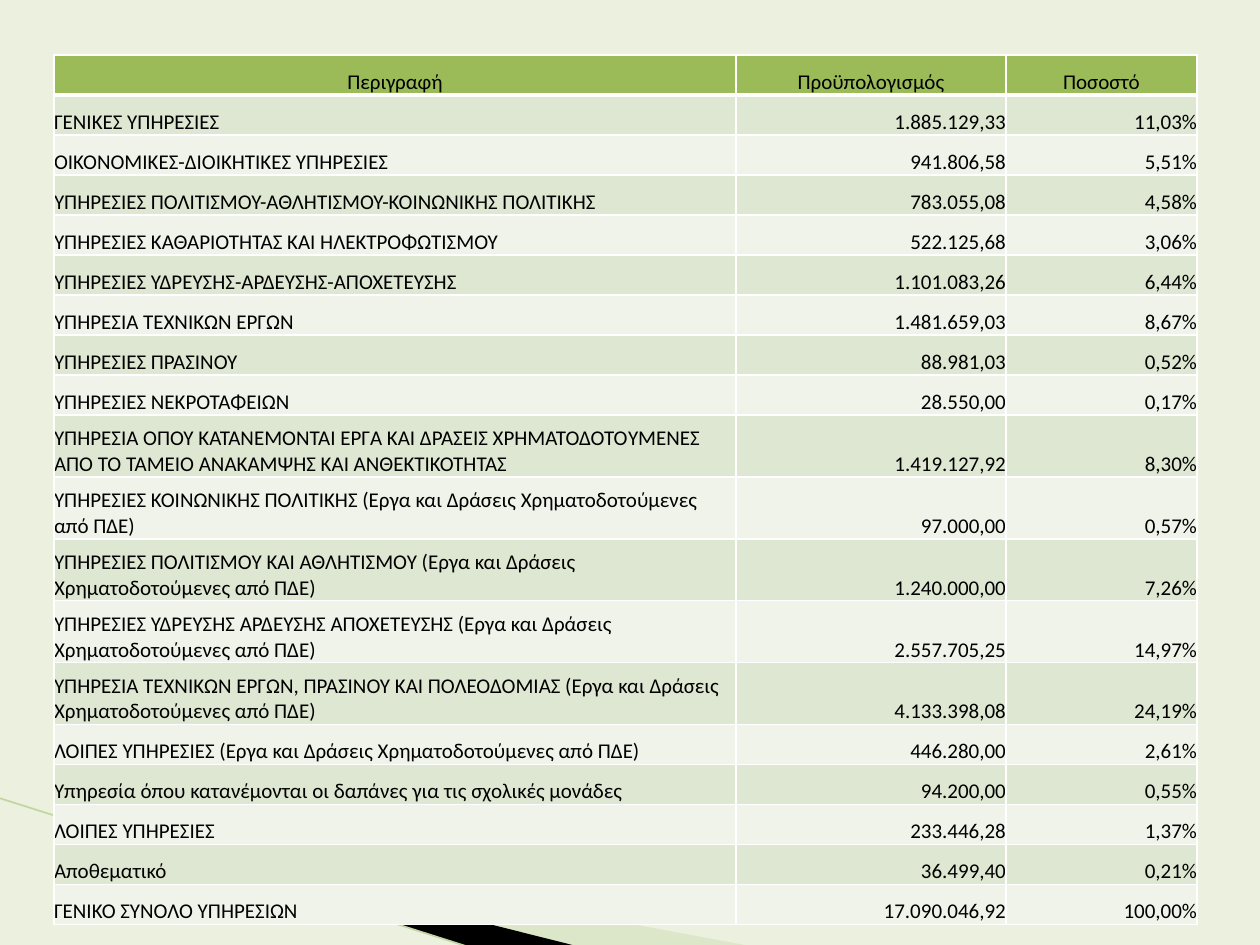
"""Builds a slide with a municipal budget table broken down by service."""
from dataclasses import dataclass

import lxml.etree
import pptx
import pptx.dml.color
import pptx.enum.shapes
import pptx.enum.text
import pptx.oxml
import pptx.oxml.ns
import pptx.util

HEADER = ("Περιγραφή", "Προϋπολογισμός", "Ποσοστό")
SERVICES = [
    ("ΓΕΝΙΚΕΣ ΥΠΗΡΕΣΙΕΣ", "1.885.129,33", "11,03%"),
    ("ΟΙΚΟΝΟΜΙΚΕΣ-ΔΙΟΙΚΗΤΙΚΕΣ ΥΠΗΡΕΣΙΕΣ", "941.806,58", "5,51%"),
    ("ΥΠΗΡΕΣΙΕΣ ΠΟΛΙΤΙΣΜΟΥ-ΑΘΛΗΤΙΣΜΟΥ-ΚΟΙΝΩΝΙΚΗΣ ΠΟΛΙΤΙΚΗΣ", "783.055,08", "4,58%"),
    ("ΥΠΗΡΕΣΙΕΣ ΚΑΘΑΡΙΟΤΗΤΑΣ ΚΑΙ ΗΛΕΚΤΡΟΦΩΤΙΣΜΟΥ", "522.125,68", "3,06%"),
    ("ΥΠΗΡΕΣΙΕΣ ΥΔΡΕΥΣΗΣ-ΑΡΔΕΥΣΗΣ-ΑΠΟΧΕΤΕΥΣΗΣ", "1.101.083,26", "6,44%"),
    ("ΥΠΗΡΕΣΙΑ ΤΕΧΝΙΚΩΝ ΕΡΓΩΝ", "1.481.659,03", "8,67%"),
    ("ΥΠΗΡΕΣΙΕΣ ΠΡΑΣΙΝΟΥ", "88.981,03", "0,52%"),
    ("ΥΠΗΡΕΣΙΕΣ ΝΕΚΡΟΤΑΦΕΙΩΝ", "28.550,00", "0,17%"),
    ("ΥΠΗΡΕΣΙΑ ΟΠΟΥ ΚΑΤΑΝΕΜΟΝΤΑΙ ΕΡΓΑ ΚΑΙ ΔΡΑΣΕΙΣ ΧΡΗΜΑΤΟΔΟΤΟΎΜΕΝΕΣ "
     "ΑΠΟ ΤΟ ΤΑΜΕΙΟ ΑΝΑΚΑΜΨΗΣ ΚΑΙ ΑΝΘΕΚΤΙΚΟΤΗΤΑΣ", "1.419.127,92", "8,30%"),
    ("ΥΠΗΡΕΣΙΕΣ ΚΟΙΝΩΝΙΚΗΣ ΠΟΛΙΤΙΚΗΣ (Εργα και Δράσεις Χρηματοδοτούμενες από ΠΔΕ)",
     "97.000,00", "0,57%"),
    ("ΥΠΗΡΕΣΙΕΣ ΠΟΛΙΤΙΣΜΟΎ ΚΑΙ ΑΘΛΗΤΙΣΜΟΎ (Εργα και Δράσεις Χρηματοδοτούμενες από ΠΔΕ)",
     "1.240.000,00", "7,26%"),
    ("ΥΠΗΡΕΣΙΕΣ ΥΔΡΕΥΣΗΣ ΑΡΔΕΥΣΗΣ ΑΠΟΧΕΤΕΥΣΗΣ (Εργα και Δράσεις Χρηματοδοτούμενες από ΠΔΕ)",
     "2.557.705,25", "14,97%"),
    ("ΥΠΗΡΕΣΙΑ ΤΕΧΝΙΚΩΝ ΕΡΓΩΝ, ΠΡΑΣΙΝΟΥ ΚΑΙ ΠΟΛΕΟΔΟΜΙΑΣ "
     "(Εργα και Δράσεις Χρηματοδοτούμενες από ΠΔΕ)", "4.133.398,08", "24,19%"),
    ("ΛΟΙΠΕΣ ΥΠΗΡΕΣΙΕΣ (Εργα και Δράσεις Χρηματοδοτούμενες από ΠΔΕ)", "446.280,00", "2,61%"),
    ("Υπηρεσία όπου κατανέμονται οι δαπάνες για τις σχολικές μονάδες", "94.200,00", "0,55%"),
    ("ΛΟΙΠΕΣ ΥΠΗΡΕΣΙΕΣ", "233.446,28", "1,37%"),
    ("Αποθεματικό", "36.499,40", "0,21%"),
    ("ΓΕΝΙΚΟ ΣΥΝΟΛΟ ΥΠΗΡΕΣΙΩΝ", "17.090.046,92", "100,00%"),
]

PX = 914400 / 126
SLIDE_SIZE = (1260, 945)
TABLE_ORIGIN = (54, 55)
COLUMN_WIDTHS = (682, 270, 191)
ROW_HEIGHT, TWO_LINE_HEIGHT = 40, 62
TWO_LINE_LENGTH = 70
GREEN_WEDGE = [(69, 820), (750, 946), (575, 946), (69, 819)]
BLACK_WEDGE = [(67, 818), (576, 946), (469, 947), (68, 819)]
ACCENT_LINE = (-1, 798, 469, 947)


@dataclass(frozen=True)
class Theme:
    background: str = "EBF1DE"
    wedge_green: str = "C6D9AA"
    wedge_black: str = "000000"
    accent_line: str = "C1D5A2"
    header: str = "9BBB59"
    bands: tuple = ("DEE7D1", "EFF3EA")
    border: str = "FFFFFF"
    text: str = "000000"
    font: str = "Calibri"
    text_size: int = 12
    wedge_opacity: int = 40
    line_width: float = 0.95
    border_width: int = 1
    header_rule_width: int = 3


THEME = Theme()
ALIGN = pptx.enum.text.PP_ALIGN


def emu(px):
    return pptx.util.Emu(round(px * PX))


def paint(fill, color):
    fill.solid()
    fill.fore_color.rgb = pptx.dml.color.RGBColor.from_string(color)


def add_wedge(slide, points, color, opacity=100):
    builder = slide.shapes.build_freeform(*points[0], scale=PX)
    builder.add_line_segments(points[1:], close=True)
    shape = builder.convert_to_shape()
    shape.shadow.inherit = False
    shape.line.fill.background()
    paint(shape.fill, color)
    if opacity < 100:
        color_element = shape.fill._xPr.find(".//" + pptx.oxml.ns.qn("a:srgbClr"))
        alpha = lxml.etree.SubElement(color_element, pptx.oxml.ns.qn("a:alpha"))
        alpha.set("val", str(opacity * 1000))


def add_accent_line(slide):
    straight = pptx.enum.shapes.MSO_CONNECTOR.STRAIGHT
    connector = slide.shapes.add_connector(straight, *map(emu, ACCENT_LINE))
    paint(connector.line.fill, THEME.accent_line)
    connector.line.width = pptx.util.Pt(THEME.line_width)
    lxml.etree.SubElement(connector._element.spPr, pptx.oxml.ns.qn("a:effectLst"))


def add_borders(cell, bottom_width):
    properties = cell._tc.get_or_add_tcPr()
    sides = dict.fromkeys("LRT", THEME.border_width) | {"B": bottom_width}
    for side, width in sides.items():
        properties.append(pptx.oxml.parse_xml(
            f'<a:ln{side} {pptx.oxml.ns.nsdecls("a")} w="{pptx.util.Pt(width)}">'
            f'<a:solidFill><a:srgbClr val="{THEME.border}"/></a:solidFill></a:ln{side}>'))


def fill_cell(cell, text, color, alignment, bottom_width):
    cell.margin_left = cell.margin_right = cell.margin_top = cell.margin_bottom = 0
    cell.vertical_anchor = pptx.enum.text.MSO_ANCHOR.BOTTOM
    add_borders(cell, bottom_width)
    paint(cell.fill, color)
    paragraph = cell.text_frame.paragraphs[0]
    paragraph.alignment = alignment
    run = paragraph.add_run()
    run.text = text
    run.font.name = THEME.font
    run.font.size = pptx.util.Pt(THEME.text_size)
    run.font.color.rgb = pptx.dml.color.RGBColor.from_string(THEME.text)


def add_budget_table(slide):
    rows = [HEADER, *SERVICES]
    heights = [TWO_LINE_HEIGHT if len(row[0]) > TWO_LINE_LENGTH else ROW_HEIGHT for row in rows]
    size = (sum(COLUMN_WIDTHS), sum(heights))
    table = slide.shapes.add_table(
        len(rows), len(HEADER), *map(emu, TABLE_ORIGIN + size)).table
    table.first_row = table.horz_banding = False
    for column, width in zip(table.columns, COLUMN_WIDTHS):
        column.width = emu(width)
    for index, (values, height) in enumerate(zip(rows, heights)):
        table.rows[index].height = emu(height)
        is_header = index == 0
        color = THEME.header if is_header else THEME.bands[(index - 1) % 2]
        alignments = [ALIGN.CENTER] * 3 if is_header else [ALIGN.LEFT, ALIGN.RIGHT, ALIGN.RIGHT]
        bottom_width = THEME.header_rule_width if is_header else THEME.border_width
        for column, (text, alignment) in enumerate(zip(values, alignments)):
            fill_cell(table.cell(index, column), text, color, alignment, bottom_width)


def main():
    presentation = pptx.Presentation()
    presentation.slide_width, presentation.slide_height = map(emu, SLIDE_SIZE)
    slide = presentation.slides.add_slide(presentation.slide_layouts[6])
    paint(slide.background.fill, THEME.background)
    add_wedge(slide, GREEN_WEDGE, THEME.wedge_green, THEME.wedge_opacity)
    add_wedge(slide, BLACK_WEDGE, THEME.wedge_black)
    add_accent_line(slide)
    add_budget_table(slide)
    presentation.save("out.pptx")


if __name__ == "__main__":
    main()
